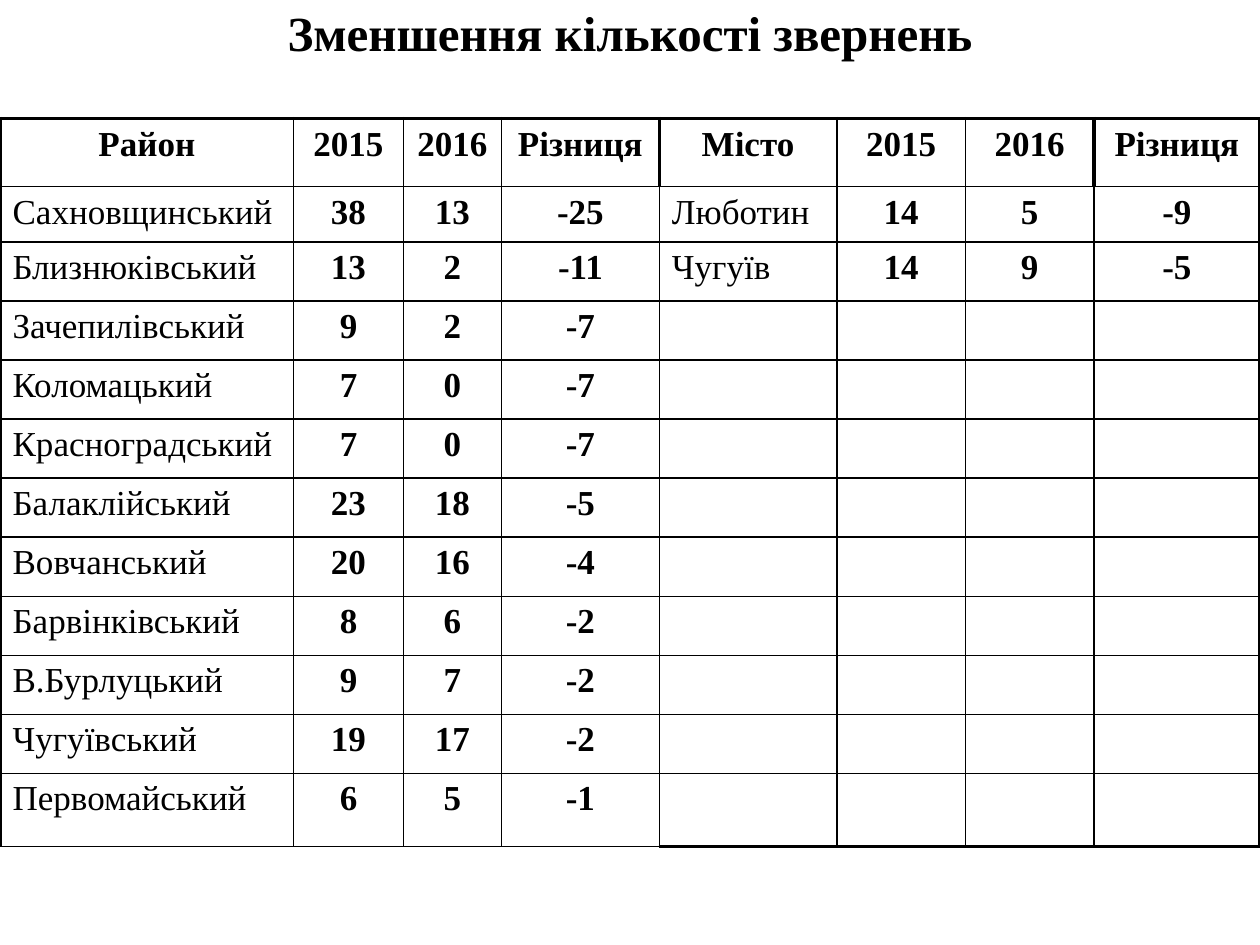
"""Build a slide with a table of districts and cities where appeals decreased."""
from dataclasses import dataclass

from lxml import etree
from pptx import Presentation
from pptx import util as u
from pptx.dml import color
from pptx.enum import text
from pptx.oxml import ns


@dataclass(frozen=True)
class Theme:
    font: str = "Times New Roman"
    ink: str = "000000"
    title_size: int = 28
    body_size: int = 20
    thin: float = 1
    thick: float = 2.25


theme = Theme()


def write(frame, content, size, bold, alignment):
    frame.text = content
    paragraph = frame.paragraphs[0]
    paragraph.alignment = alignment
    for run in paragraph.runs:
        run.font.name = theme.font
        run.font.size = u.Pt(size)
        run.font.bold = bold
        run.font.color.rgb = color.RGBColor.from_string(theme.ink)


def add_border(cell, side, width):
    properties = cell._tc.get_or_add_tcPr()
    line = etree.SubElement(properties, ns.qn(f"a:ln{side}"), w=str(u.Pt(width)))
    fill = etree.SubElement(line, ns.qn("a:solidFill"))
    etree.SubElement(fill, ns.qn("a:srgbClr"), val=theme.ink)


header = ["Район", "2015", "2016", "Різниця", "Місто", "2015", "2016", "Різниця"]
districts = [
    ("Сахновщинський", 38, 13),
    ("Близнюківський", 13, 2),
    ("Зачепилівський", 9, 2),
    ("Коломацький", 7, 0),
    ("Красноградський", 7, 0),
    ("Балаклійський", 23, 18),
    ("Вовчанський", 20, 16),
    ("Барвінківський", 8, 6),
    ("В.Бурлуцький", 9, 7),
    ("Чугуївський", 19, 17),
    ("Первомайський", 6, 5),
]
cities = [("Люботин", 14, 5), ("Чугуїв", 14, 9)]
column_widths = [5.92, 2.21, 1.98, 3.18, 3.58, 2.59, 2.59, 3.35]
row_heights = [1.37, 1.12] + [1.19] * 9 + [1.47]
name_columns = (0, 4)
last_row, last_column = len(row_heights) - 1, len(column_widths) - 1

rows = [header] + [[""] * len(header) for district in districts]
for first_column, places in zip(name_columns, (districts, cities)):
    for row, (name, before, after) in zip(rows[1:], places):
        row[first_column:first_column + 4] = [name, str(before), str(after), str(after - before)]

presentation = Presentation()
presentation.slide_width, presentation.slide_height = u.Cm(25.4), u.Cm(19.05)
slide = presentation.slides.add_slide(presentation.slide_layouts[5])

title = slide.shapes.title
title.left, title.top, title.width, title.height = u.Cm(0), u.Cm(0), u.Cm(25.4), u.Cm(1.27)
title.text_frame.auto_size = text.MSO_AUTO_SIZE.NONE
title.text_frame.vertical_anchor = text.MSO_ANCHOR.MIDDLE
write(title.text_frame, "Зменшення кількості звернень", theme.title_size, True, text.PP_ALIGN.CENTER)

table = slide.shapes.add_table(
    len(rows), len(header), u.Cm(0), u.Cm(2.39), u.Cm(sum(column_widths)), u.Cm(sum(row_heights))
).table
table.first_row = table.horz_banding = False
for column, width in zip(table.columns, column_widths):
    column.width = u.Cm(width)
for row, height in zip(table.rows, row_heights):
    row.height = u.Cm(height)

for row_index, row in enumerate(rows):
    for column_index, content in enumerate(row):
        cell = table.cell(row_index, column_index)
        is_header = row_index == 0
        is_name = column_index in name_columns and not is_header
        alignment = text.PP_ALIGN.LEFT if is_name else text.PP_ALIGN.CENTER
        write(cell.text_frame, content, theme.body_size, not is_name, alignment)
        thick_sides = {
            "L": column_index == 0 or is_header and column_index in (4, 7),
            "R": column_index == last_column or is_header and column_index in (3, 6),
            "T": is_header,
            "B": row_index == last_row and column_index >= 4,
        }
        for side, is_thick in thick_sides.items():
            add_border(cell, side, theme.thick if is_thick else theme.thin)
        cell.fill.background()

presentation.save("out.pptx")
